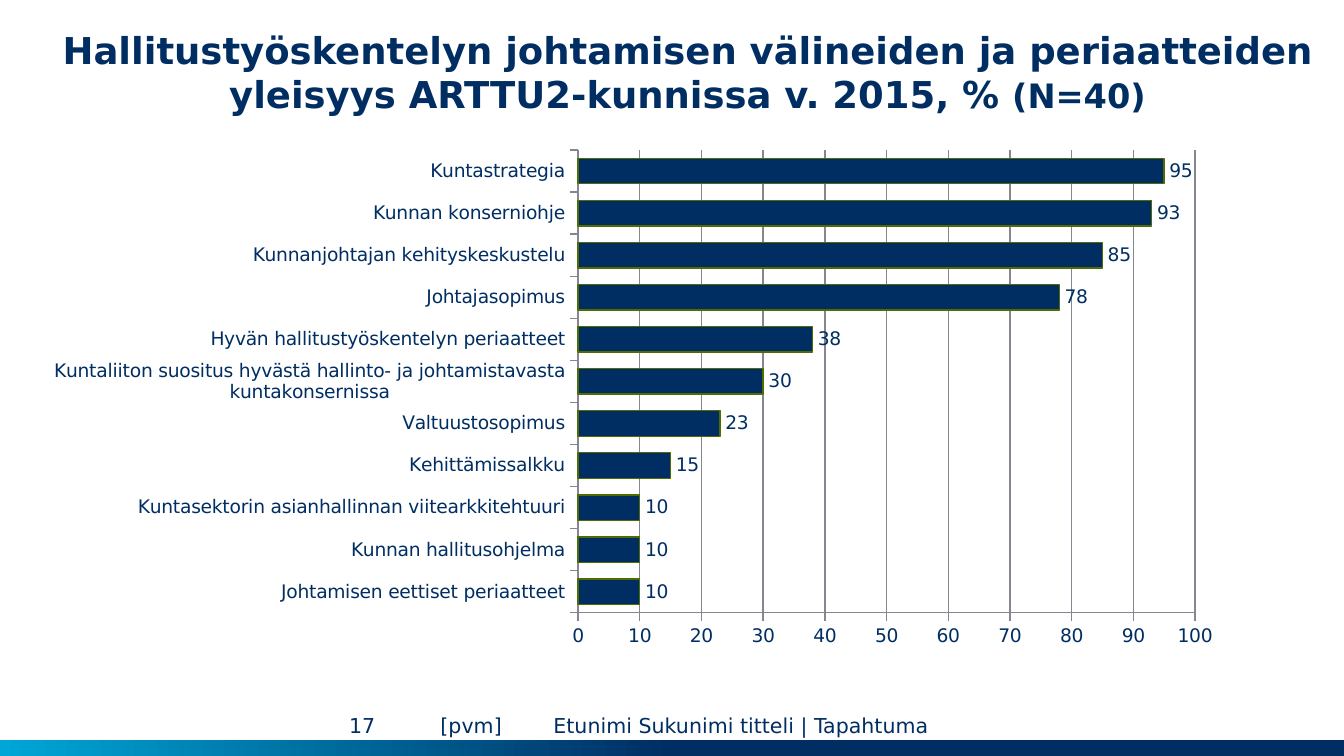
from dataclasses import dataclass

from lxml import etree
from pptx import Presentation
from pptx import util as u
from pptx.chart import data
from pptx.dml import color
from pptx.enum import chart as charts, shapes, text
from pptx.oxml import ns


@dataclass(frozen=True)
class Theme:
    navy: color.RGBColor = color.RGBColor.from_string("002E63")
    cyan: color.RGBColor = color.RGBColor.from_string("00A6D6")
    bar_edge: color.RGBColor = color.RGBColor.from_string("506B00")
    grid: color.RGBColor = color.RGBColor.from_string("868690")
    font: str = "DejaVu Sans"
    title_size: float = 19.8
    note_size: float = 18
    footer_size: float = 11
    chart_size: float = 10


THEME = Theme()

TOOLS = [
    ("Johtamisen eettiset periaatteet", 10),
    ("Kunnan hallitusohjelma", 10),
    ("Kuntasektorin asianhallinnan viitearkkitehtuuri", 10),
    ("Kehittämissalkku", 15),
    ("Valtuustosopimus", 23),
    ("Kuntaliiton suositus hyvästä hallinto- ja johtamistavasta kuntakonsernissa", 30),
    ("Hyvän hallitustyöskentelyn periaatteet", 38),
    ("Johtajasopimus", 78),
    ("Kunnanjohtajan kehityskeskustelu", 85),
    ("Kunnan konserniohje", 93),
    ("Kuntastrategia", 95),
]

FOOTER = [
    ("17", 6.3, 1.09, text.PP_ALIGN.CENTER),
    ("[pvm]", 7.65, 2.51, text.PP_ALIGN.CENTER),
    ("Etunimi Sukunimi titteli | Tapahtuma", 10.46, 8.61, text.PP_ALIGN.LEFT),
]


def style_font(font, size, bold=False):
    font.name = THEME.font
    font.size = u.Pt(size)
    font.bold = bold
    font.color.rgb = THEME.navy


def set_frame(frame, anchor, vertical_inset=0):
    frame.word_wrap = True
    frame.auto_size = text.MSO_AUTO_SIZE.NONE
    frame.vertical_anchor = anchor
    frame.margin_left = frame.margin_right = 0
    frame.margin_top = frame.margin_bottom = u.Cm(vertical_inset)


def add_band(slide):
    band = slide.shapes.add_shape(
        shapes.MSO_SHAPE.RECTANGLE, 0, u.Cm(13.99), u.Cm(25.4), u.Cm(0.3))
    band.shadow.inherit = False
    band.line.fill.background()
    band.fill.gradient()
    band.fill.gradient_angle = 180
    stops = zip(band.fill.gradient_stops, (0.5, 1), (THEME.navy, THEME.cyan))
    for stop, position, rgb in stops:
        stop.position = position
        stop.color.rgb = rgb


def fill_title(slide):
    title = slide.shapes.title
    title.left, title.top = u.Cm(1.12), u.Cm(0.53)
    title.width, title.height = u.Cm(23.75), u.Cm(1.8)
    set_frame(title.text_frame, text.MSO_ANCHOR.BOTTOM, 0.13)
    paragraph = title.text_frame.paragraphs[0]
    paragraph.alignment = text.PP_ALIGN.CENTER
    style_font(paragraph.font, THEME.title_size, bold=True)
    paragraph.add_run().text = (
        "Hallitustyöskentelyn johtamisen välineiden ja periaatteiden "
        "yleisyys ARTTU2-kunnissa v. 2015, % ")
    note = paragraph.add_run()
    note.text = "(N=40)"
    note.font.size = u.Pt(THEME.note_size)


def add_footer_text(slide, wording, left, width, alignment):
    box = slide.shapes.add_textbox(u.Cm(left), u.Cm(13.44), u.Cm(width), u.Cm(0.56))
    set_frame(box.text_frame, text.MSO_ANCHOR.MIDDLE)
    paragraph = box.text_frame.paragraphs[0]
    paragraph.text = wording
    paragraph.alignment = alignment
    style_font(paragraph.font, THEME.footer_size)


def place_plot(chart, **fractions):
    plot_area = chart.plots[0]._element.getparent()
    for old in plot_area.findall(ns.qn("c:layout")):
        plot_area.remove(old)
    layout = etree.Element(ns.qn("c:layout"))
    manual = etree.SubElement(layout, ns.qn("c:manualLayout"))
    settings = {"layoutTarget": "inner", "xMode": "edge", "yMode": "edge", **fractions}
    for name, value in settings.items():
        etree.SubElement(manual, ns.qn(f"c:{name}")).set("val", str(value))
    plot_area.insert(0, layout)


def style_axis(axis):
    axis.major_tick_mark = charts.XL_TICK_MARK.OUTSIDE
    axis.minor_tick_mark = charts.XL_TICK_MARK.NONE
    axis.format.line.color.rgb = THEME.grid
    axis.format.line.width = u.Pt(0.75)


def add_tool_chart(slide):
    chart_data = data.CategoryChartData()
    chart_data.categories = [name for name, _ in TOOLS]
    chart_data.add_series("Series 1", [share for _, share in TOOLS])
    chart = slide.shapes.add_chart(
        charts.XL_CHART_TYPE.BAR_CLUSTERED,
        u.Cm(0.64), u.Cm(2.64), u.Cm(22.86), u.Cm(9.83), chart_data).chart
    chart.has_legend = False
    chart.has_title = False
    style_font(chart.font, THEME.chart_size)

    style_axis(chart.category_axis)
    chart.category_axis.has_major_gridlines = False
    value_axis = chart.value_axis
    style_axis(value_axis)
    value_axis.minimum_scale, value_axis.maximum_scale = 0, 100
    value_axis.major_unit = 10
    value_axis.has_major_gridlines = True
    value_axis.major_gridlines.format.line.color.rgb = THEME.grid
    value_axis.major_gridlines.format.line.width = u.Pt(0.75)
    value_axis.tick_labels.number_format = "0"
    value_axis.tick_labels.number_format_is_linked = False

    plot = chart.plots[0]
    plot.gap_width = 65
    plot.vary_by_categories = False
    series = plot.series[0]
    series.format.fill.solid()
    series.format.fill.fore_color.rgb = THEME.navy
    series.format.line.color.rgb = THEME.bar_edge
    series.format.line.width = u.Pt(0.75)
    labels = series.data_labels
    labels.show_value = True
    labels.position = charts.XL_LABEL_POSITION.OUTSIDE_END
    labels.number_format = "0"
    labels.number_format_is_linked = False
    style_font(labels.font, THEME.chart_size)
    place_plot(chart, x=0.45, y=0.02, w=0.51, h=0.89)


def main():
    presentation = Presentation()
    presentation.slide_width, presentation.slide_height = u.Cm(25.4), u.Cm(14.29)
    slide = presentation.slides.add_slide(presentation.slide_layouts[5])
    add_band(slide)
    fill_title(slide)
    for entry in FOOTER:
        add_footer_text(slide, *entry)
    add_tool_chart(slide)
    presentation.save("out.pptx")


if __name__ == "__main__":
    main()
